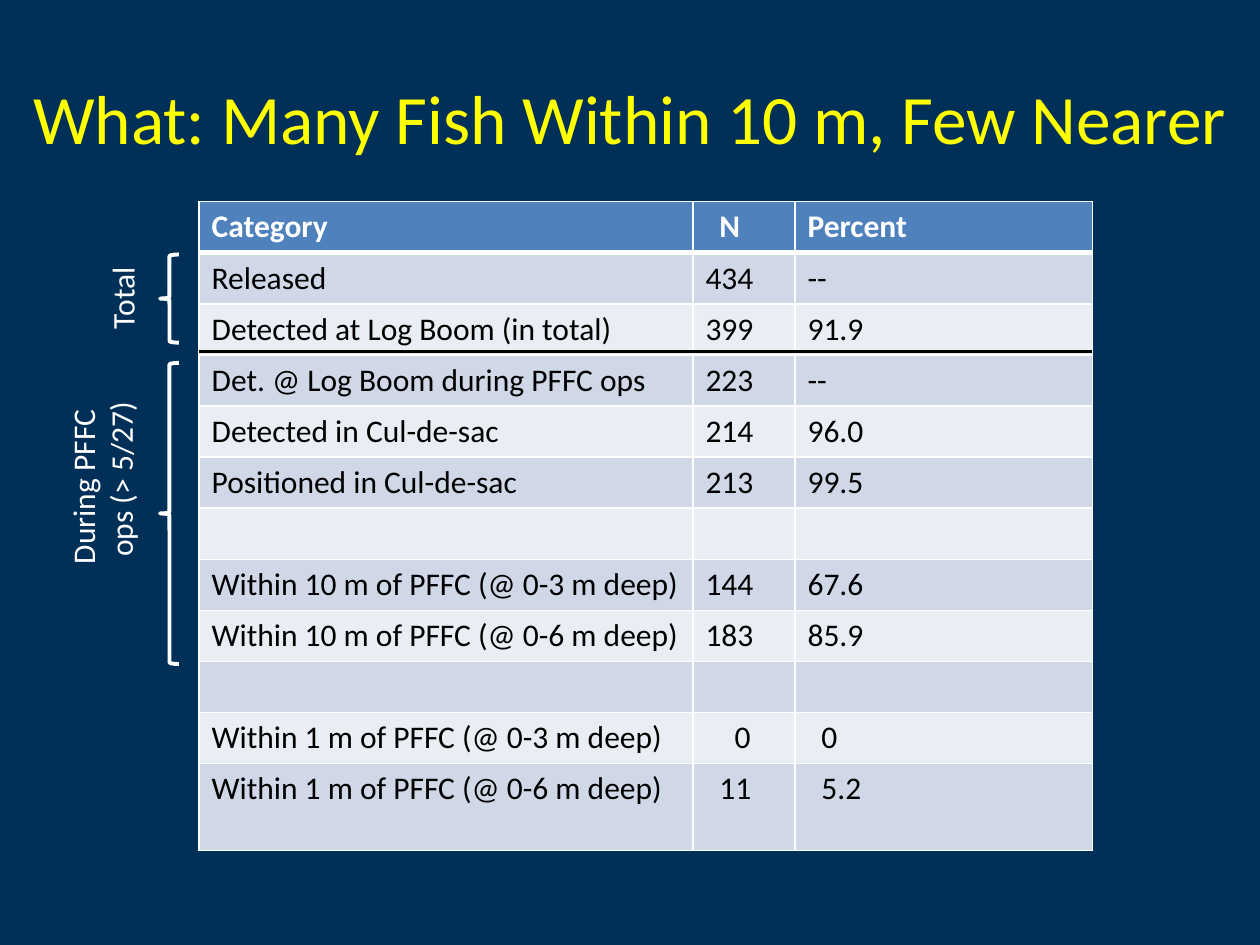
import pptx
import pptx.util
import pptx.dml.color
import pptx.enum.shapes
import pptx.enum.text
import pptx.oxml
from pptx.util import Inches

NAMESPACE = 'xmlns:a="http://schemas.openxmlformats.org/drawingml/2006/main"'


def color(hex_string):
    return pptx.dml.color.RGBColor.from_string(hex_string)


def format_text(text_frame, size, hex_string, bold=False):
    for paragraph in text_frame.paragraphs:
        for run in paragraph.runs:
            run.font.name = "Calibri"
            run.font.size = pptx.util.Pt(size)
            run.font.bold = bold
            run.font.color.rgb = color(hex_string)


presentation = pptx.Presentation()
presentation.slide_width = Inches(10)
presentation.slide_height = Inches(7.5)
slide = presentation.slides.add_slide(presentation.slide_layouts[5])
slide.background.fill.solid()
slide.background.fill.fore_color.rgb = color("002F57")

# Title
title = slide.shapes.title
title.left, title.top = Inches(0), Inches(0.3)
title.width, title.height = Inches(10), Inches(1.25)
title.text_frame.text = "What: Many Fish Within 10 m, Few Nearer"
title.text_frame.vertical_anchor = pptx.enum.text.MSO_ANCHOR.MIDDLE
title.text_frame.paragraphs[0].alignment = pptx.enum.text.PP_ALIGN.CENTER
format_text(title.text_frame, 39.6, "FFFF00")

# Table of fish counts
rows = [
    ("Category", "N", "Percent"),
    ("Released", "434", "--"),
    ("Detected at Log Boom (in total)", "399", "91.9"),
    ("Det. @ Log Boom during PFFC ops", "223", "--"),
    ("Detected in Cul-de-sac", "214", "96.0"),
    ("Positioned in Cul-de-sac", "213", "99.5"),
    ("", "", ""),
    ("Within 10 m of PFFC (@ 0-3 m deep)", "144", "67.6"),
    ("Within 10 m of PFFC (@ 0-6 m deep)", "183", "85.9"),
    ("", "", ""),
    ("Within 1 m of PFFC (@ 0-3 m deep)", "0", "0"),
    ("Within 1 m of PFFC (@ 0-6 m deep)", "11", "5.2"),
]
# Extra left margin, by row and column, that lines the short values up
indents = {(0, 1): 0.11, (10, 1): 0.23, (10, 2): 0.11, (11, 1): 0.11, (11, 2): 0.11}

table = slide.shapes.add_table(
    len(rows), 3, Inches(1.58), Inches(1.6), Inches(7.09), Inches(5.09)
).table
for column, width in zip(table.columns, (3.92, 0.81, 2.36)):
    column.width = Inches(width)
for row in table.rows:
    row.height = Inches(0.4)
table.rows[len(rows) - 1].height = Inches(0.69)

for row_index, values in enumerate(rows):
    is_header = row_index == 0
    band = "4F81BD" if is_header else ("E9EDF4", "D0D8E8")[row_index % 2]
    for column_index, value in enumerate(values):
        cell = table.cell(row_index, column_index)
        cell.text_frame.text = value
        cell.margin_left = Inches(0.1 + indents.get((row_index, column_index), 0))
        format_text(cell.text_frame, 18, "FFFFFF" if is_header else "000000", is_header)
        # White borders, thick around the bottom of the header
        for side in "LRTB":
            thick = (row_index, side) in ((0, "B"), (1, "T"))
            cell._tc.get_or_add_tcPr().append(pptx.oxml.parse_xml(
                f'<a:ln{side} {NAMESPACE} w="{pptx.util.Pt(3 if thick else 1)}">'
                f'<a:solidFill><a:srgbClr val="FFFFFF"/></a:solidFill></a:ln{side}>'))
        cell.fill.solid()
        cell.fill.fore_color.rgb = color(band)

# Rotated group labels with their braces
groups = [
    ("Total", (0.62, 2.16, 0.7, 0.4), 2.02, 0.7),
    ("During PFFC\nops (> 5/27)", (0.03, 3.44, 1.56, 0.71), 2.88, 2.39),
]
for text, box, brace_top, brace_height in groups:
    label = slide.shapes.add_textbox(*map(Inches, box))
    label.rotation = 270
    label.text_frame.word_wrap = False
    label.text_frame.text = text
    format_text(label.text_frame, 18, "FFFFFF")
    for paragraph in label.text_frame.paragraphs[1:]:
        paragraph._p.get_or_add_pPr().set("marL", str(Inches(0.06)))

    brace = slide.shapes.add_shape(
        pptx.enum.shapes.MSO_SHAPE.LEFT_BRACE,
        Inches(1.27), Inches(brace_top), Inches(0.15), Inches(brace_height))
    brace.shadow.inherit = False
    brace.fill.background()
    brace.line.color.rgb = color("FFFFFF")
    brace.line.width = pptx.util.Pt(2.25)

# Divider between the two groups
divider = slide.shapes.add_connector(
    pptx.enum.shapes.MSO_CONNECTOR.STRAIGHT,
    Inches(1.58), Inches(2.79), Inches(8.67), Inches(2.79))
divider.line.color.rgb = color("000000")
divider.line.width = pptx.util.Pt(1.5)
divider._element.spPr.append(pptx.oxml.parse_xml(f"<a:effectLst {NAMESPACE}/>"))

presentation.save("out.pptx")
